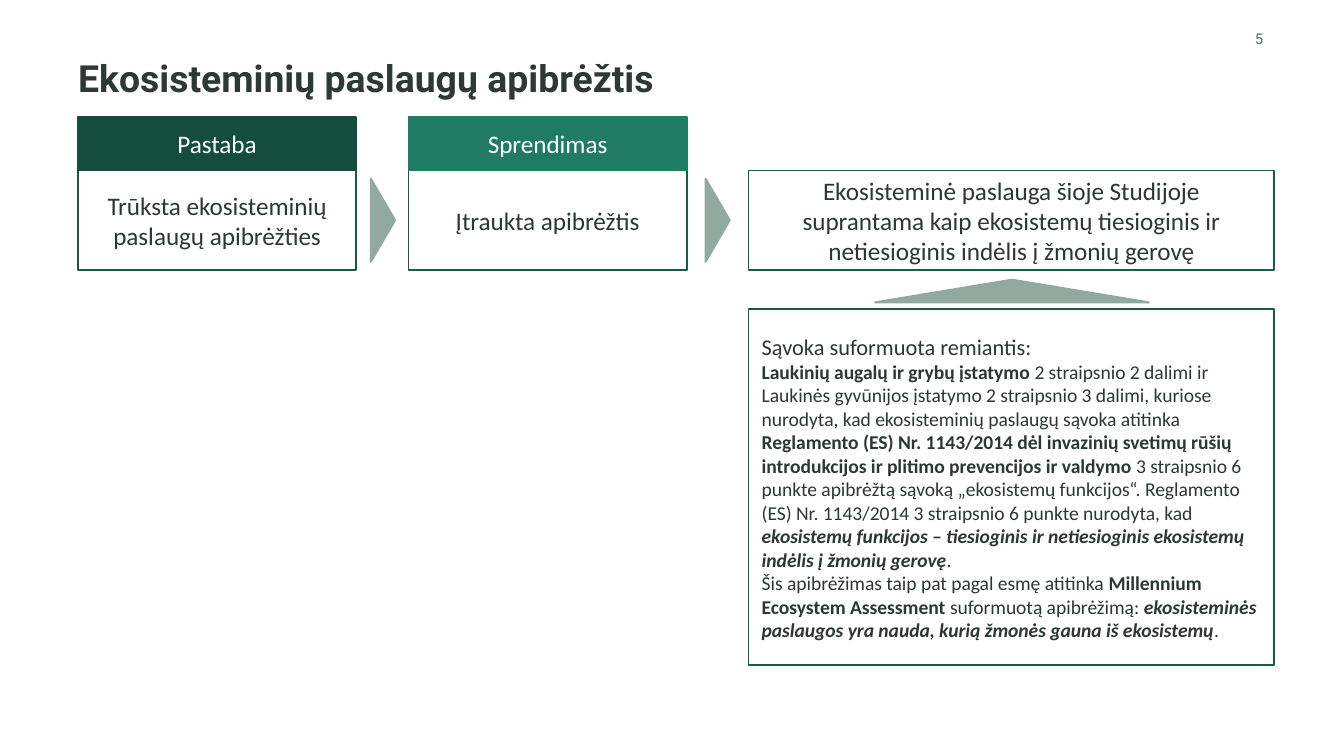
from dataclasses import dataclass

from pptx import Presentation
from pptx.dml.color import RGBColor
from pptx.enum.shapes import MSO_SHAPE
from pptx.enum.text import MSO_ANCHOR, PP_ALIGN
from pptx.shapes.autoshape import Shape
from pptx.slide import Slide
from pptx.util import Pt

RECTANGLE, TRIANGLE = MSO_SHAPE.RECTANGLE, MSO_SHAPE.ISOSCELES_TRIANGLE
TOP, MIDDLE = MSO_ANCHOR.TOP, MSO_ANCHOR.MIDDLE
LEFT, CENTER, RIGHT = PP_ALIGN.LEFT, PP_ALIGN.CENTER, PP_ALIGN.RIGHT


@dataclass(frozen=True)
class Theme:
    title_font: str = "Roboto"
    body_font: str = "Calibri"
    title_color: str = "2D3934"
    number_color: str = "5A7268"
    text: str = "2C3834"
    header_text: str = "FEFFFE"
    outline: str = "175B48"
    note_header: str = "144D3E"
    solution_header: str = "1F7B61"
    arrow: str = "92A9A0"
    title_size: float = 20
    number_size: float = 8
    box_size: float = 13.5
    lead_size: float = 12
    detail_size: float = 10.5


@dataclass(frozen=True)
class Area:
    left: float
    top: float
    width: float
    height: float


@dataclass(frozen=True)
class Span:
    text: str
    bold: bool = False
    italic: bool = False


@dataclass(frozen=True)
class Block:
    spans: list[Span]
    size: float
    color: str
    font: str = "Calibri"
    align: PP_ALIGN = CENTER


@dataclass(frozen=True)
class Column:
    left: float
    header: str
    fill: str
    body: str


THEME = Theme()

# Layout grid, in points
HEADER_TOP, HEADER_HEIGHT = 62.6, 28.8
BODY_TOP, BODY_HEIGHT = 91.4, 53.4
COLUMN_WIDTH = 149
DEFINITION_LEFT, DEFINITION_WIDTH = 401, 281.6
ARROW_LENGTH, ARROW_SPAN = 13, 44.6
ARROW_MIDDLE = 118

COLUMNS = [
    Column(41.8, "Pastaba", THEME.note_header,
           "Trūksta ekosisteminių paslaugų apibrėžties"),
    Column(218.9, "Sprendimas", THEME.solution_header, "Įtraukta apibrėžtis"),
]
ARROW_CENTERS = [205.2, 384.5]

DEFINITION = ("Ekosisteminė paslauga šioje Studijoje suprantama kaip ekosistemų "
              "tiesioginis ir netiesioginis indėlis į žmonių gerovę")
SOURCE_LEAD = [Span("Sąvoka suformuota remiantis:")]
SOURCE_LAW = [
    Span("Laukinių augalų ir grybų įstatymo ", bold=True),
    Span("2 straipsnio 2 dalimi ir Laukinės gyvūnijos įstatymo 2 straipsnio 3 dalimi, "
         "kuriose nurodyta, kad ekosisteminių paslaugų sąvoka atitinka "),
    Span("Reglamento (ES) Nr. 1143/2014 dėl invazinių svetimų rūšių introdukcijos "
         "ir plitimo prevencijos ir valdymo ", bold=True),
    Span("3 straipsnio 6 punkte apibrėžtą sąvoką „ekosistemų funkcijos“. Reglamento "
         "(ES) Nr. 1143/2014 3 straipsnio 6 punkte nurodyta, kad "),
    Span("ekosistemų funkcijos – tiesioginis ir netiesioginis ekosistemų indėlis "
         "į žmonių gerovę", bold=True, italic=True),
    Span("."),
]
SOURCE_ASSESSMENT = [
    Span("Šis apibrėžimas taip pat pagal esmę atitinka "),
    Span("Millennium Ecosystem Assessment ", bold=True),
    Span("suformuotą apibrėžimą: "),
    Span("ekosisteminės paslaugos yra nauda, kurią žmonės gauna iš ekosistemų",
         bold=True, italic=True),
    Span("."),
]


def write(shape: Shape, blocks: list[Block], anchor: MSO_ANCHOR = MIDDLE) -> None:
    """Fill a shape with one paragraph per block."""
    frame = shape.text_frame
    frame.word_wrap = True
    frame.vertical_anchor = anchor
    for index, block in enumerate(blocks):
        paragraph = frame.add_paragraph() if index else frame.paragraphs[0]
        paragraph.alignment = block.align
        paragraph.font.name = block.font
        paragraph.font.size = Pt(block.size)
        paragraph.font.color.rgb = RGBColor.from_string(block.color)
        for span in block.spans:
            run = paragraph.add_run()
            run.text = span.text
            run.font.bold = span.bold
            run.font.italic = span.italic


def add_label(slide: Slide, area: Area, block: Block, anchor: MSO_ANCHOR) -> Shape:
    """Add a text box without margins."""
    label = slide.shapes.add_textbox(
        Pt(area.left), Pt(area.top), Pt(area.width), Pt(area.height))
    frame = label.text_frame
    frame.margin_left = frame.margin_top = frame.margin_right = frame.margin_bottom = 0
    write(label, [block], anchor)
    return label


def add_figure(slide: Slide, kind: MSO_SHAPE, area: Area, line: str,
               fill: str | None = None) -> Shape:
    """Add an outlined preset shape, filled when a fill is given."""
    shape = slide.shapes.add_shape(
        kind, Pt(area.left), Pt(area.top), Pt(area.width), Pt(area.height))
    shape.shadow.inherit = False
    shape.line.color.rgb = RGBColor.from_string(line)
    shape.line.width = Pt(1)
    if fill:
        shape.fill.solid()
        shape.fill.fore_color.rgb = RGBColor.from_string(fill)
    else:
        shape.fill.background()
    return shape


def box_text(text: str, color: str = THEME.text) -> list[Block]:
    return [Block([Span(text)], THEME.box_size, color)]


def main() -> None:
    presentation = Presentation()
    presentation.slide_width, presentation.slide_height = Pt(720), Pt(405)
    slide = presentation.slides.add_slide(presentation.slide_layouts[6])

    # Title and slide number
    title = add_label(
        slide, Area(41.8, 32.4, 635, 22.3),
        Block([Span("Ekosisteminių paslaugų apibrėžtis", bold=True)],
              THEME.title_size, THEME.title_color, THEME.title_font, LEFT), TOP)
    title.text_frame.paragraphs[0].line_spacing = 0.9
    add_label(slide, Area(514.8, 15.8, 162, 9.4),
              Block([Span("5")], THEME.number_size, THEME.number_color,
                    THEME.title_font, RIGHT), MIDDLE)

    # Note and solution columns
    for column in COLUMNS:
        body = add_figure(slide, RECTANGLE, Area(
            column.left, BODY_TOP, COLUMN_WIDTH, BODY_HEIGHT), THEME.outline)
        write(body, box_text(column.body))
        header = add_figure(slide, RECTANGLE, Area(
            column.left, HEADER_TOP, COLUMN_WIDTH, HEADER_HEIGHT),
            column.fill, column.fill)
        write(header, box_text(column.header, THEME.header_text))

    # Definition and its sources
    definition = add_figure(slide, RECTANGLE, Area(
        DEFINITION_LEFT, BODY_TOP, DEFINITION_WIDTH, BODY_HEIGHT), THEME.outline)
    write(definition, box_text(DEFINITION))
    sources = add_figure(slide, RECTANGLE, Area(
        DEFINITION_LEFT, 165.6, DEFINITION_WIDTH, 190.8), THEME.outline)
    write(sources, [
        Block(SOURCE_LEAD, THEME.lead_size, THEME.text, align=LEFT),
        Block(SOURCE_LAW, THEME.detail_size, THEME.text, align=LEFT),
        Block(SOURCE_ASSESSMENT, THEME.detail_size, THEME.text, align=LEFT),
    ])

    # Arrowheads: two pointing right, one pointing up
    for center in ARROW_CENTERS:
        arrow = add_figure(slide, TRIANGLE, Area(
            center - ARROW_SPAN / 2, ARROW_MIDDLE - ARROW_LENGTH / 2,
            ARROW_SPAN, ARROW_LENGTH), THEME.arrow, THEME.arrow)
        arrow.rotation = 90
    add_figure(slide, TRIANGLE, Area(468.7, 149.8, 146.9, 12.2),
               THEME.arrow, THEME.arrow)

    presentation.save("out.pptx")


if __name__ == "__main__":
    main()
